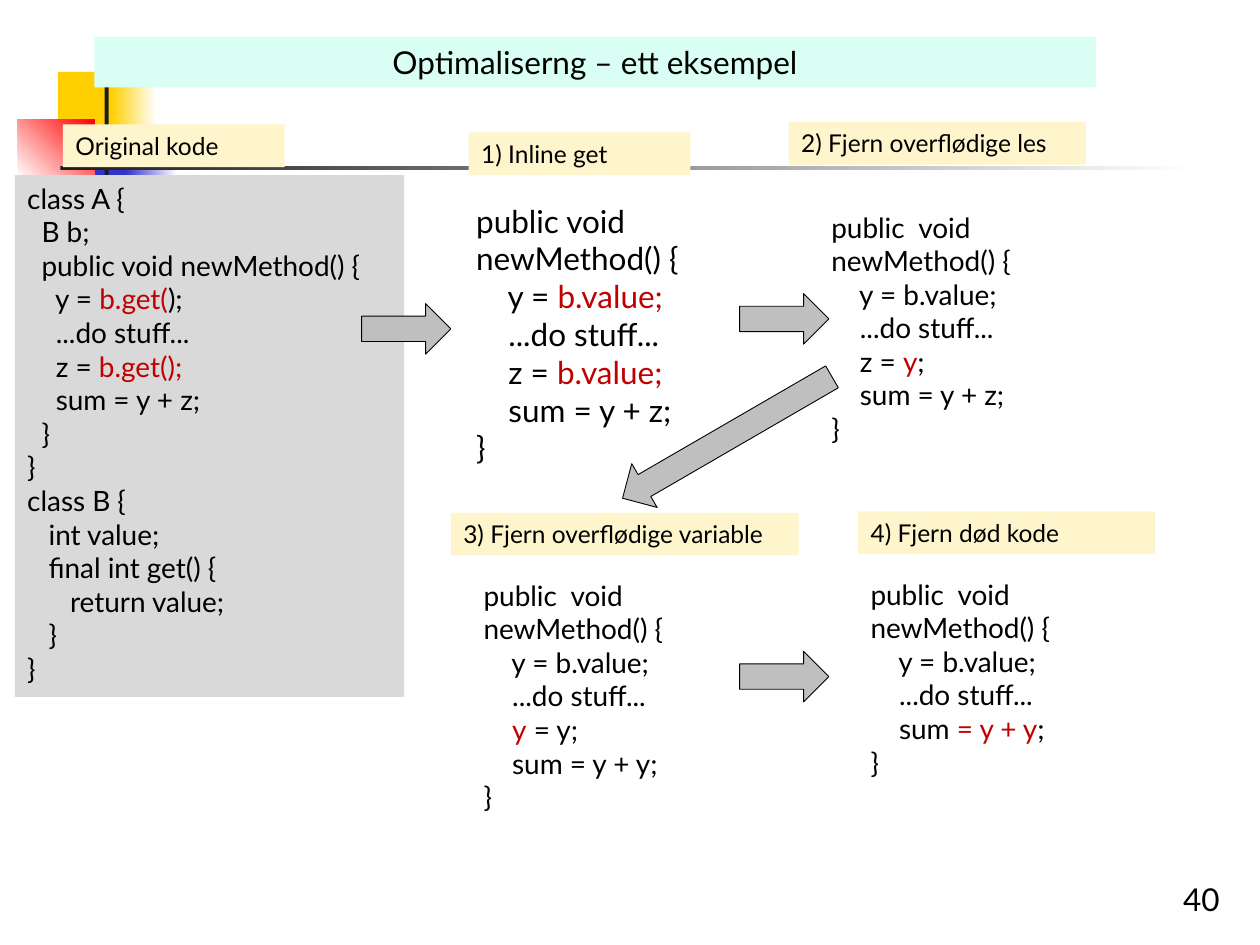
"""Build a slide that walks through a code optimisation in four steps."""
from dataclasses import dataclass
from typing import Any, NamedTuple, Optional

from pptx import Presentation
from pptx.dml.color import RGBColor
from pptx.enum import shapes, text
from pptx.util import Cm, Pt


@dataclass(frozen=True)
class Theme:
    """Colours, font and type sizes of the slide."""
    font: str = "Lato"
    ink: str = "000000"
    change: str = "C00000"
    paper: str = "FFFFFF"
    title: str = "D9FFF5"
    label: str = "FFF5CC"
    code: str = "D9D9D9"
    arrow: str = "BFBFBF"
    yellow: str = "FFCF01"
    blue: str = "3333CC"
    red: str = "FF0000"
    rule: str = "1C1C1C"
    large: int = 18
    medium: int = 16
    small: int = 14
    hairline: float = 0.5


class Box(NamedTuple):
    """Position and size in centimetres."""
    left: float
    top: float
    width: float
    height: float


class Block(NamedTuple):
    """One piece of colour in the corner ornament."""
    box: Box
    start: str
    end: Optional[str] = None
    angle: float = 0


class Step(NamedTuple):
    """A labelled piece of code; text between bars is a change."""
    label: str
    label_box: Box
    code: str
    code_box: Box
    size: int = 16
    fill: Optional[str] = None


class Arrow(NamedTuple):
    """An arrow between two steps."""
    box: Box
    rotation: float = 0


T = Theme()
LABEL_H = 0.86
CODE_W = 6.2
ARROW_W, ARROW_H = 1.8, 1.02

ORNAMENT = [
    Block(Box(1.17, 1.45, 1.22, 1.32), T.yellow),
    Block(Box(2.24, 1.45, 0.91, 1.32), T.yellow, T.paper),
    Block(Box(1.5, 2.62, 1.17, 1.32), T.blue),
    Block(Box(2.54, 2.62, 1.02, 1.32), T.blue, T.paper),
    Block(Box(0.36, 2.41, 1.55, 1.17), T.paper, T.red, 45),
    Block(Box(2.11, 1.14, 0.08, 2.92), T.rule),
    Block(Box(1.22, 3.35, 22.86, 0.08), T.rule, T.paper),
]

STEPS = [
    Step("Original kode", Box(1.27, 2.51, 4.47, LABEL_H), """class A {
  B b;
  public void newMethod() {
    y = |b.get(|);
    ...do stuff...
    z = |b.get();|
    sum = y + z;
  }
}
class B {
   int value;
   final int get() {
      return value;
   }
}""", Box(0.3, 3.53, 7.85, 10.52), fill=T.code),
    Step("1) Inline get", Box(9.45, 2.67, 4.47, LABEL_H), """public void newMethod() {
    y = |b.value;|
    ...do stuff...
    z = |b.value;|
    sum = y + z;
}""", Box(9.35, 3.94, CODE_W, 6.4), T.large),
    Step("2) Fjern overflødige les", Box(15.9, 2.46, 5.99, LABEL_H), """public  void newMethod() {
    y = b.value;
    ...do stuff...
    z = |y|;
    sum = y + z;
}""", Box(16.51, 4.11, CODE_W, 5.05)),
    Step("3) Fjern overflødige variable", Box(9.09, 10.34, 7.01, LABEL_H), """public  void newMethod() {
    y = b.value;
    ...do stuff...
    |y| = y;
    sum = y + y;
}""", Box(9.5, 11.53, CODE_W, 6.4)),
    Step("4) Fjern død kode", Box(17.3, 10.31, 5.99, LABEL_H), """public  void newMethod() {
    y = b.value;
    ...do stuff...
    sum |= y + y|;
}""", Box(17.3, 11.51, CODE_W, 5.74)),
]

ARROWS = [
    Arrow(Box(7.29, 6.12, ARROW_W, ARROW_H)),
    Arrow(Box(14.91, 5.92, ARROW_W, ARROW_H)),
    Arrow(Box(12.22, 8.31, 4.88, ARROW_H), 149.9),
    Arrow(Box(14.91, 13.13, ARROW_W, ARROW_H)),
]


def apply(obj: Any, values: dict[str, Any]) -> None:
    """Set each named attribute on an object."""
    for name, value in values.items():
        setattr(obj, name, value)


def paint(fill: Any, colour: str) -> None:
    """Fill with one colour."""
    fill.solid()
    fill.fore_color.rgb = RGBColor.from_string(colour)


def place(box: Box) -> list[int]:
    """Convert a box to slide lengths."""
    return [Cm(n) for n in box]


def add_shape(s: Any, kind: Any, box: Box, colour: str) -> Any:
    """Add a plain filled shape without outline or shadow."""
    sp = s.shapes.add_shape(kind, *place(box))
    sp.shadow.inherit = False
    sp.line.fill.background()
    paint(sp.fill, colour)
    return sp


def write(sp: Any, content: str, size: int, align: Any = text.PP_ALIGN.LEFT,
          anchor: Any = text.MSO_ANCHOR.TOP) -> None:
    """Write lines of text, colouring the parts between bars."""
    tf = sp.text_frame
    apply(tf, {"word_wrap": True, "auto_size": text.MSO_AUTO_SIZE.NONE,
               "vertical_anchor": anchor})
    for i, line in enumerate(content.split("\n")):
        p = tf.add_paragraph() if i else tf.paragraphs[0]
        p.alignment = align
        for j, part in enumerate(line.split("|")):
            if part:
                r = p.add_run()
                r.text = part
                apply(r.font, {"name": T.font, "size": Pt(size)})
                r.font.color.rgb = RGBColor.from_string(T.change if j % 2 else T.ink)


def add_block(s: Any, block: Block) -> None:
    """Draw one piece of the ornament."""
    sp = add_shape(s, shapes.MSO_SHAPE.RECTANGLE, block.box, block.start)
    if block.end:
        sp.fill.gradient()
        sp.fill.gradient_angle = block.angle
        for stop, colour in zip(sp.fill.gradient_stops, (block.start, block.end)):
            stop.color.rgb = RGBColor.from_string(colour)


def add_title(s: Any, content: str, box: Box) -> None:
    """Move and format the title, in front of the ornament."""
    sp = s.shapes.title
    apply(sp, dict(zip(("left", "top", "width", "height"), place(box))))
    paint(sp.fill, T.title)
    write(sp, content, T.large, text.PP_ALIGN.CENTER)
    s.shapes._spTree.append(sp._element)


def add_step(s: Any, step: Step) -> None:
    """Draw the code of a step and its label."""
    if step.fill:
        sp = add_shape(s, shapes.MSO_SHAPE.RECTANGLE, step.code_box, step.fill)
    else:
        sp = s.shapes.add_textbox(*place(step.code_box))
    write(sp, step.code, step.size)
    label = add_shape(s, shapes.MSO_SHAPE.RECTANGLE, step.label_box, T.label)
    write(label, step.label, T.small)


def add_arrow(s: Any, arrow: Arrow) -> None:
    """Draw one outlined block arrow."""
    sp = add_shape(s, shapes.MSO_SHAPE.RIGHT_ARROW, arrow.box, T.arrow)
    sp.rotation = arrow.rotation
    paint(sp.line.fill, T.ink)
    sp.line.width = Pt(T.hairline)


def main() -> None:
    """Build and save the slide."""
    prs = Presentation()
    apply(prs, {"slide_width": Cm(25.4), "slide_height": Cm(19.05)})
    s = prs.slides.add_slide(prs.slide_layouts[5])
    for block in ORNAMENT:
        add_block(s, block)
    number = s.shapes.add_textbox(*place(Box(19.56, 17.35, 5.28, 1.27)))
    write(number, "40", T.large, text.PP_ALIGN.RIGHT, text.MSO_ANCHOR.BOTTOM)
    add_title(s, "Optimaliserng – ett eksempel", Box(1.9, 0.74, 20.19, 1.02))
    for step in STEPS:
        add_step(s, step)
    for arrow in ARROWS:
        add_arrow(s, arrow)
    prs.save("out.pptx")


if __name__ == "__main__":
    main()
